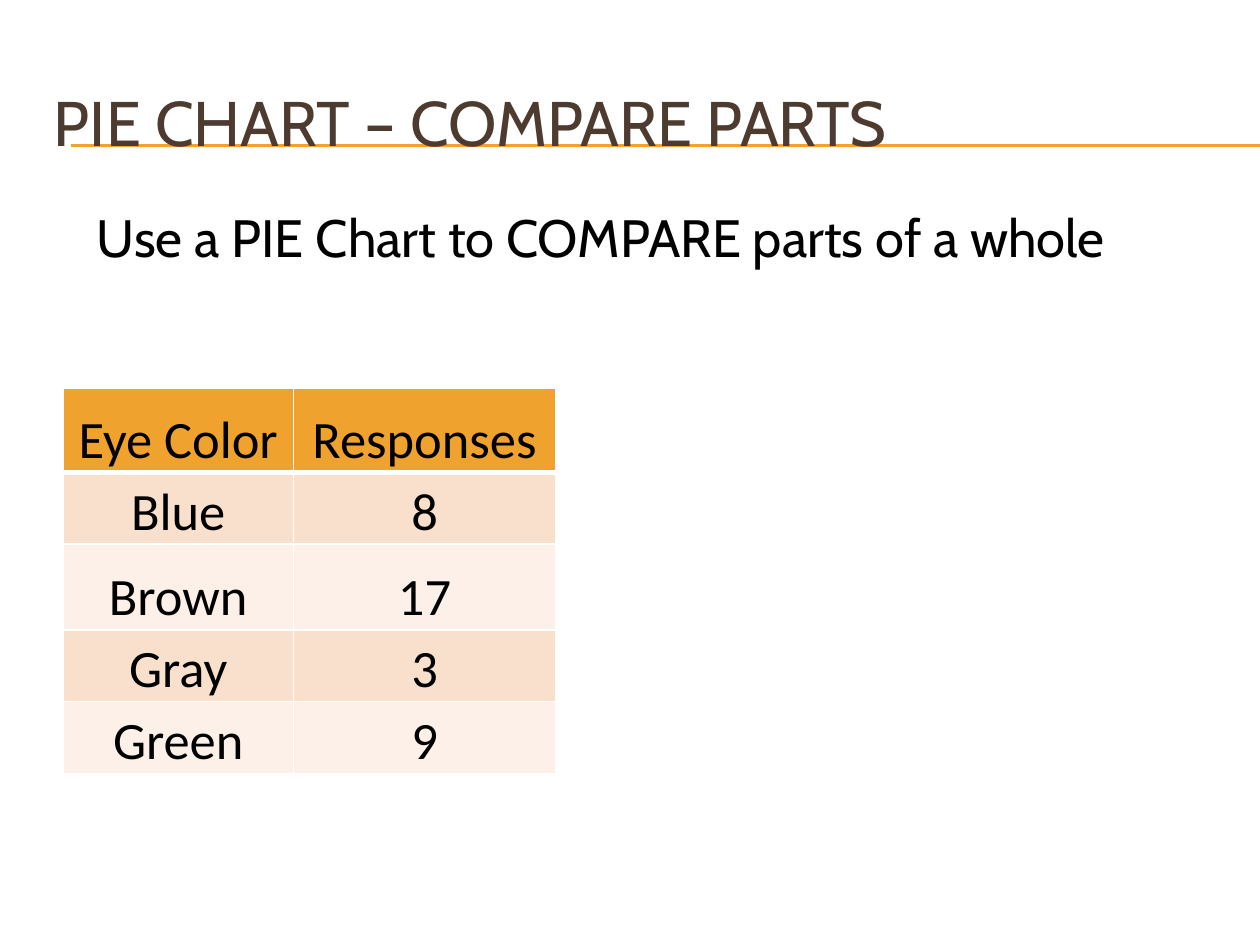
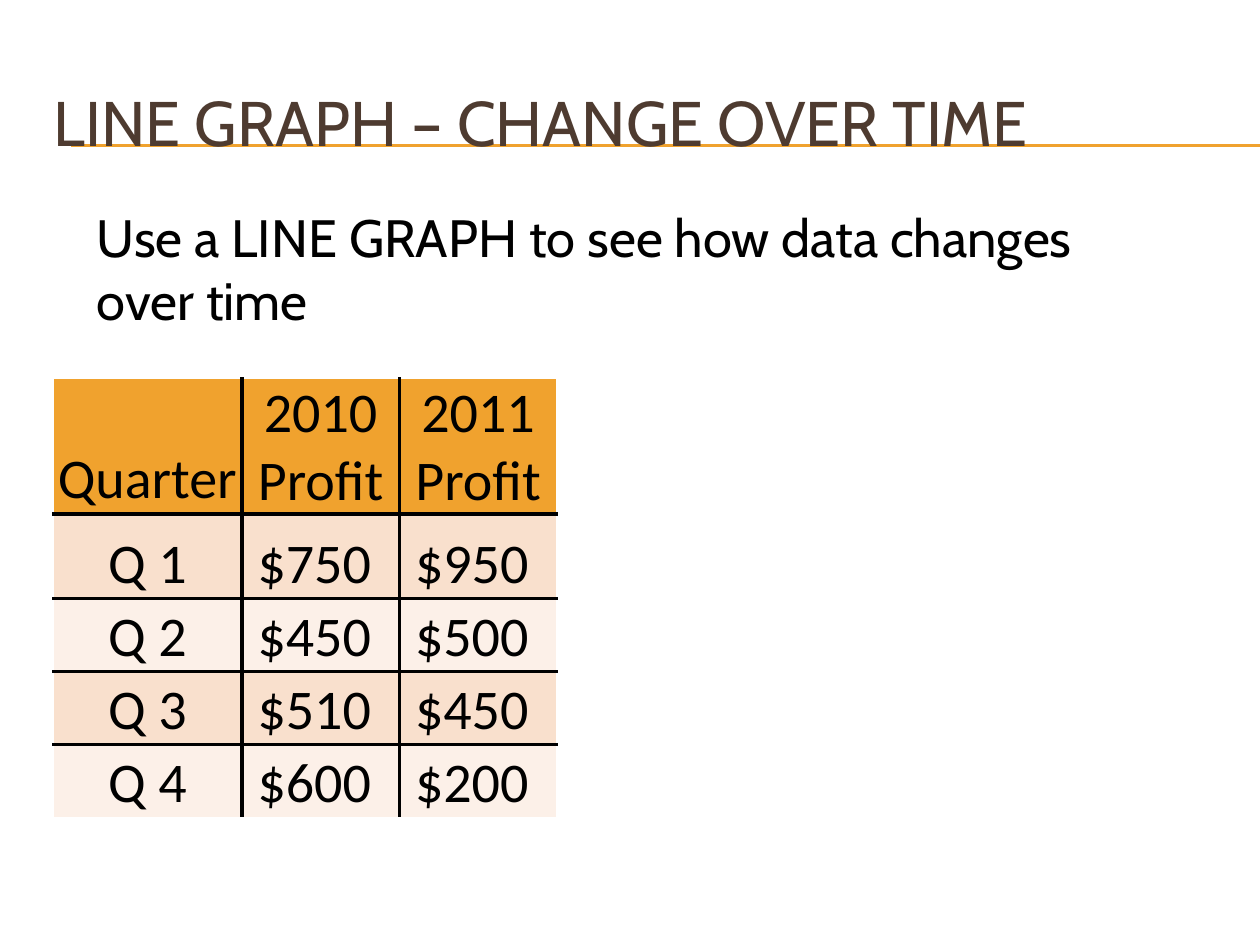
from dataclasses import dataclass

from lxml import etree
from pptx import Presentation
from pptx.dml.color import RGBColor
from pptx.enum import shapes, text
from pptx.oxml import ns
from pptx.util import Inches, Pt


@dataclass(frozen=True)
class Theme:
    accent: str = "F0A22E"
    title_ink: str = "4E3B30"
    ink: str = "000000"
    white: str = "FFFFFF"
    bands: tuple = ("F9E0CD", "FCF0E8")
    heading_font: str = "Cabin"
    table_font: str = "Calibri"
    title_size: int = 36
    body_size: int = 30


THEME = Theme()
THIN_WHITE = (THEME.white, 1)
THICK_WHITE = (THEME.white, 3)
BLACK_RULE = (THEME.ink, 2.25)


def add_run(paragraph, words, size, font, color):
    run = paragraph.add_run()
    run.text = words
    run.font.size = Pt(size)
    run.font.name = font
    run.font.color.rgb = RGBColor.from_string(color)


def add_words(slide, box, words, size, color, anchor):
    frame = slide.shapes.add_textbox(*map(Inches, box)).text_frame
    frame.word_wrap = True
    frame.vertical_anchor = anchor
    add_run(frame.paragraphs[0], words, size, THEME.heading_font, color)


def add_title_band(slide, box, title):
    left, top, width, height = box
    # Double rule running off the right edge
    for offset in (0.65, 0.66):
        y = Inches(top + offset)
        rule = slide.shapes.add_connector(
            shapes.MSO_CONNECTOR.STRAIGHT, Inches(left + 0.23), y, Inches(10), y)
        rule.line.color.rgb = RGBColor.from_string(THEME.accent)
        rule.line.width = Pt(0.75)
        etree.SubElement(rule._element.spPr, ns.qn("a:effectLst"))
    add_words(slide, box, title, THEME.title_size, THEME.title_ink,
              text.MSO_ANCHOR.MIDDLE)


def set_borders(cell, borders):
    properties = cell._tc.get_or_add_tcPr()
    for index, side in enumerate("LRTB"):
        color, points = borders[side]
        edge = etree.Element(ns.qn(f"a:ln{side}"), w=str(Pt(points)))
        fill = etree.SubElement(edge, ns.qn("a:solidFill"))
        etree.SubElement(fill, ns.qn("a:srgbClr"), val=color)
        properties.insert(index, edge)


def style_cell(cell, words, fill, size):
    cell.fill.solid()
    cell.fill.fore_color.rgb = RGBColor.from_string(fill)
    cell.vertical_anchor = text.MSO_ANCHOR.BOTTOM
    cell.margin_left = cell.margin_right = cell.margin_top = Inches(0.01)
    cell.margin_bottom = 0
    paragraph = cell.text_frame.paragraphs[0]
    paragraph.alignment = text.PP_ALIGN.CENTER
    add_run(paragraph, words, size, THEME.table_font, THEME.ink)


def add_data_table(slide, corner, columns, heights, records, size, grid, header_rule):
    """Banded table: thin white outside, grid lines inside."""
    last_row, last_column = len(heights) - 1, len(columns) - 1
    table = slide.shapes.add_table(
        len(heights), len(columns), *map(Inches, corner),
        Inches(sum(columns)), Inches(sum(heights))).table
    table.first_row = table.horz_banding = False
    for column, width in zip(table.columns, columns):
        column.width = Inches(width)
    for row, height in zip(table.rows, heights):
        row.height = Inches(height)

    for r, record in enumerate(records):
        fill = THEME.bands[(r - 1) % 2] if r else THEME.accent
        row_rules = [THIN_WHITE, header_rule] + [grid] * (last_row - 1) + [THIN_WHITE]
        for c, words in enumerate(record):
            cell = table.cell(r, c)
            style_cell(cell, words, fill, size)
            set_borders(cell, {
                "L": grid if c else THIN_WHITE,
                "R": grid if c < last_column else THIN_WHITE,
                "T": row_rules[r],
                "B": row_rules[r + 1],
            })


def add_chart_lesson(deck, title, advice, advice_height, **data):
    slide = deck.slides.add_slide(deck.slide_layouts[6])
    add_title_band(slide, (0.33, 0.5, 9.5, 0.92), title)
    add_words(slide, (0.67, 1.58, 8.25, advice_height), advice,
              THEME.body_size, THEME.ink, text.MSO_ANCHOR.TOP)
    add_data_table(slide, **data)


def main():
    deck = Presentation()
    deck.slide_width, deck.slide_height = Inches(10), Inches(7.5)

    # Parts of a whole
    add_chart_lesson(
        deck, "PIE CHART – COMPARE PARTS",
        "Use a PIE Chart to COMPARE parts of a whole", 0.61,
        corner=(0.5, 3.08), columns=(1.83, 2.08),
        heights=(0.67, 0.57, 0.68, 0.57, 0.57), size=30,
        grid=THIN_WHITE, header_rule=THICK_WHITE,
        records=[("Eye Color", "Responses"), ("Blue", "8"), ("Brown", "17"),
                 ("Gray", "3"), ("Green", "9")])

    # Change over time
    add_chart_lesson(
        deck, "LINE GRAPH – CHANGE OVER TIME",
        "Use a LINE GRAPH to see how data changes over time", 1.11,
        corner=(0.42, 3), columns=(1.5, 1.25, 1.25),
        heights=(1.08, 0.67, 0.58, 0.58, 0.58), size=32,
        grid=BLACK_RULE, header_rule=BLACK_RULE,
        records=[("Quarter", "2010 Profit", "2011 Profit"),
                 ("Q 1", "$750 ", "$950 "), ("Q 2", "$450 ", "$500 "),
                 ("Q 3", "$510 ", "$450 "), ("Q 4", "$600 ", "$200 ")])

    deck.save("out.pptx")


if __name__ == "__main__":
    main()
